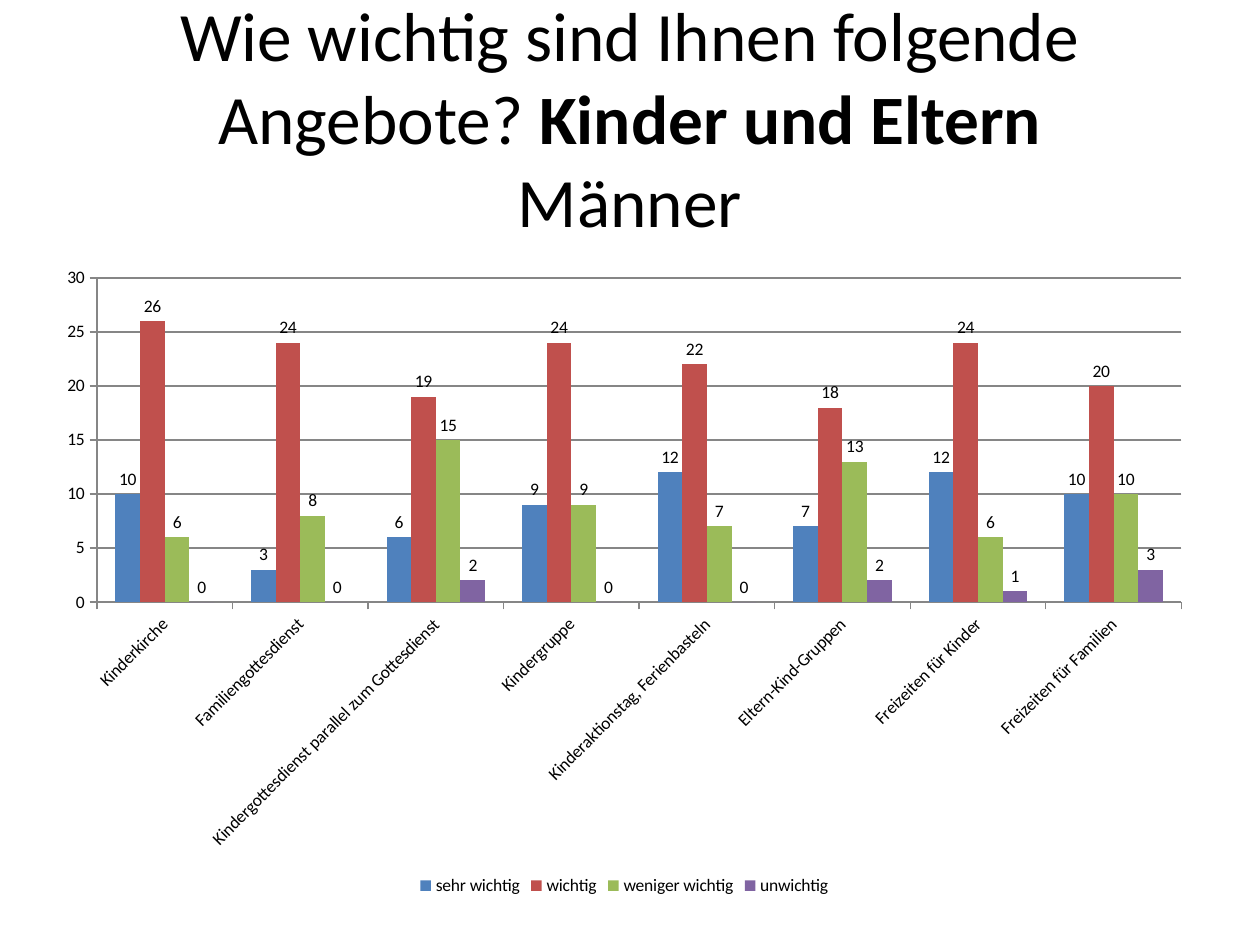
from dataclasses import dataclass

from pptx import Presentation
from pptx.chart.chart import Chart
from pptx.chart.data import CategoryChartData
from pptx.dml.color import RGBColor
from pptx.enum.chart import XL_CHART_TYPE, XL_LABEL_POSITION, XL_LEGEND_POSITION, XL_TICK_MARK
from pptx.enum.text import MSO_ANCHOR, PP_ALIGN
from pptx.util import Inches, Pt

COLUMNS = XL_CHART_TYPE.COLUMN_CLUSTERED
LABEL_ABOVE = XL_LABEL_POSITION.OUTSIDE_END
LEGEND_BOTTOM = XL_LEGEND_POSITION.BOTTOM
TICK_OUT = XL_TICK_MARK.OUTSIDE
MIDDLE = MSO_ANCHOR.MIDDLE
CENTER = PP_ALIGN.CENTER


@dataclass(frozen=True)
class Theme:
    font: str = "Calibri"
    text: str = "000000"
    background: str = "FFFFFF"
    grid: str = "868686"
    title_size: float = 39.6
    chart_size: float = 10


@dataclass(frozen=True)
class Area:
    left: float
    top: float
    width: float
    height: float

    def lengths(self) -> tuple[int, int, int, int]:
        return (
            int(self.left * SLIDE_WIDTH),
            int(self.top * SLIDE_HEIGHT),
            int(self.width * SLIDE_WIDTH),
            int(self.height * SLIDE_HEIGHT),
        )


@dataclass(frozen=True)
class Rating:
    name: str
    counts: tuple[int, ...]
    color: str


THEME = Theme()
SLIDE_WIDTH, SLIDE_HEIGHT = Inches(10), Inches(7.5)
TITLE_AREA = Area(0.05, 0.04, 0.9, 1 / 6)
CHART_AREA = Area(0.035, 0.27, 0.921, 0.683)
LABEL_ROTATION = -45 * 60000

OFFERS = (
    "Kinderkirche",
    "Familiengottesdienst",
    "Kindergottesdienst parallel zum Gottesdienst",
    "Kindergruppe",
    "Kinderaktionstag, Ferienbasteln",
    "Eltern-Kind-Gruppen",
    "Freizeiten für Kinder",
    "Freizeiten für Familien",
)
RATINGS = (
    Rating("sehr wichtig", (10, 3, 6, 9, 12, 7, 12, 10), "4F81BD"),
    Rating("wichtig", (26, 24, 19, 24, 22, 18, 24, 20), "C0504D"),
    Rating("weniger wichtig", (6, 8, 15, 9, 7, 13, 6, 10), "9BBB59"),
    Rating("unwichtig", (0, 0, 2, 0, 0, 2, 1, 3), "8064A2"),
)


def style_font(font, size: float, bold: bool = False) -> None:
    font.name = THEME.font
    font.size = Pt(size)
    font.bold = bold
    font.color.rgb = RGBColor.from_string(THEME.text)


def add_span(para, text: str, *, size: float, bold: bool = False) -> None:
    span = para.add_run()
    span.text = text
    style_font(span.font, size, bold)


def add_title(page) -> None:
    frame = page.shapes.add_textbox(*TITLE_AREA.lengths()).text_frame
    frame.word_wrap = True
    frame.vertical_anchor = MIDDLE
    para = frame.paragraphs[0]
    para.alignment = CENTER
    add_span(para, "Wie wichtig sind Ihnen folgende Angebote? ", size=THEME.title_size)
    add_span(para, "Kinder und Eltern", size=THEME.title_size, bold=True)
    para.add_line_break()
    add_span(para, "Männer", size=THEME.title_size)


def style_axes(chart: Chart) -> None:
    gray = RGBColor.from_string(THEME.grid)
    offers, counts = chart.category_axis, chart.value_axis
    counts.minimum_scale, counts.maximum_scale, counts.major_unit = 0, 30, 5
    counts.has_major_gridlines = True
    for axis in (offers, counts):
        axis.major_tick_mark = TICK_OUT
        style_font(axis.tick_labels.font, THEME.chart_size)
    for line in (offers.format.line, counts.format.line, counts.major_gridlines.format.line):
        line.color.rgb = gray
        line.width = Pt(0.75)
    offers._element.txPr.bodyPr.set("rot", str(LABEL_ROTATION))


def add_ratings_chart(page) -> None:
    data = CategoryChartData(number_format="0")
    data.categories = OFFERS
    for rating in RATINGS:
        data.add_series(rating.name, rating.counts)
    chart = page.shapes.add_chart(COLUMNS, *CHART_AREA.lengths(), data).chart
    style_font(chart.font, THEME.chart_size)
    chart.has_title = False
    chart.has_legend = True
    chart.legend.position = LEGEND_BOTTOM
    chart.legend.include_in_layout = False
    style_font(chart.legend.font, THEME.chart_size)
    style_axes(chart)

    plot = chart.plots[0]
    plot.gap_width, plot.overlap = 150, 0
    plot.vary_by_categories = False
    for series, rating in zip(plot.series, RATINGS):
        series.format.fill.solid()
        series.format.fill.fore_color.rgb = RGBColor.from_string(rating.color)
        series.invert_if_negative = False
        labels = series.data_labels
        labels.show_value = True
        labels.position = LABEL_ABOVE
        style_font(labels.font, THEME.chart_size)


def main() -> None:
    deck = Presentation()
    deck.slide_width, deck.slide_height = SLIDE_WIDTH, SLIDE_HEIGHT
    page = deck.slides.add_slide(deck.slide_layouts[6])
    page.background.fill.solid()
    page.background.fill.fore_color.rgb = RGBColor.from_string(THEME.background)
    add_title(page)
    add_ratings_chart(page)
    deck.save("out.pptx")


if __name__ == "__main__":
    main()
